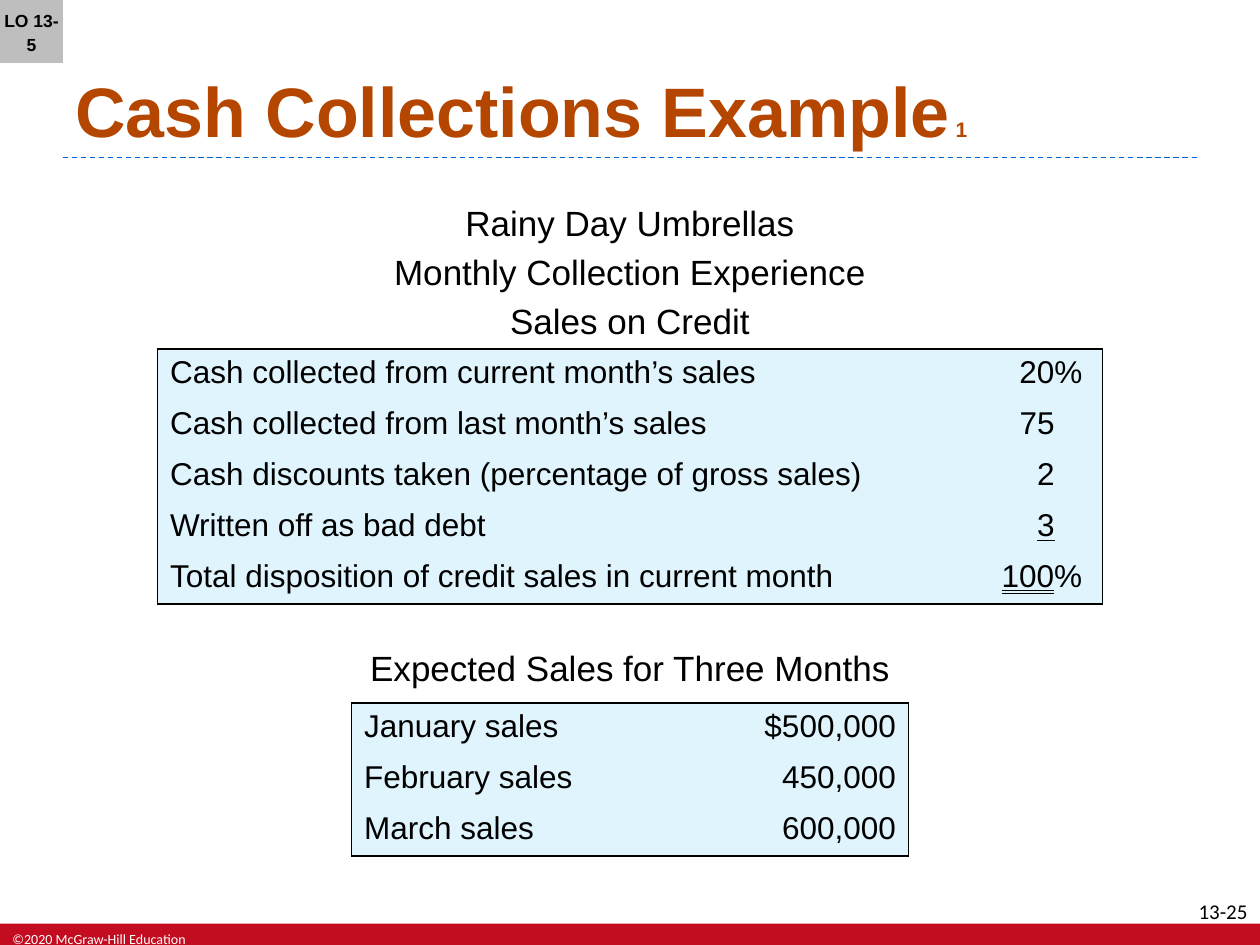
from dataclasses import dataclass

from lxml import etree
from pptx import Presentation
from pptx.dml.color import RGBColor
from pptx.enum.dml import MSO_LINE
from pptx.enum.shapes import MSO_CONNECTOR, MSO_SHAPE
from pptx.enum.text import MSO_ANCHOR, MSO_TEXT_UNDERLINE_TYPE, PP_ALIGN
from pptx.oxml.ns import qn
from pptx.util import Inches, Pt

RECT = MSO_SHAPE.RECTANGLE
STRAIGHT = MSO_CONNECTOR.STRAIGHT
DASH = MSO_LINE.DASH
TOP, MIDDLE, BOTTOM = MSO_ANCHOR.TOP, MSO_ANCHOR.MIDDLE, MSO_ANCHOR.BOTTOM
LEFT, CENTER, RIGHT = PP_ALIGN.LEFT, PP_ALIGN.CENTER, PP_ALIGN.RIGHT
SINGLE = MSO_TEXT_UNDERLINE_TYPE.SINGLE_LINE
DOUBLE = MSO_TEXT_UNDERLINE_TYPE.DOUBLE_LINE

COLS, ROWS = 40, 30
UNIT = 0.25
BLACK, WHITE, RUST, RED = "000000", "FFFFFF", "B44600", "C30C20"
GREY, BLUE, PALE = "BEBEBE", "0064C8", "DFF4FC"
ROW = 1.62  # table row height in grid rows
DIGITS, PERCENT = 0.42, 0.64  # right tab stops in inches
PLAIN = "{2D5ABB26-0587-4C30-8999-92F81FD0307C}"


@dataclass
class Box:
    """Place in grid columns and rows."""
    x: float
    y: float
    w: float
    h: float

    def emu(self) -> list:
        return [grid(n) for n in (self.x, self.y, self.w, self.h)]


@dataclass
class Value:
    """Table entry; a tab stop in inches puts its right end there."""
    text: str
    tab: float = 0
    align: PP_ALIGN = LEFT
    line: MSO_TEXT_UNDERLINE_TYPE = None
    tail: str = ""


def grid(n: float):
    return Inches(n * UNIT)


def rgb(code: str) -> RGBColor:
    return RGBColor.from_string(code)


def write(par, text: str, size=18, color=BLACK, font="Arial", bold=False,
          line=None, align=None):
    run = par.add_run()
    run.text = text
    face = run.font
    face.name, face.size, face.bold = font, Pt(size), bold
    face.underline = line
    face.color.rgb = rgb(color)
    if align is not None:
        par.alignment = align


def label(slide, box: Box, lines: list, anchor=TOP, gap=0, **style):
    """Add a text box with one paragraph a line and return its last paragraph."""
    frame = slide.shapes.add_textbox(*box.emu()).text_frame
    frame.word_wrap, frame.vertical_anchor = True, anchor
    for i, text in enumerate(lines):
        par = frame.add_paragraph() if i else frame.paragraphs[0]
        par.space_after = Pt(gap)
        write(par, text, **style)
    return par


def block(slide, box: Box, color: str):
    shape = slide.shapes.add_shape(RECT, *box.emu())
    shape.shadow.inherit = False
    shape.fill.solid()
    shape.fill.fore_color.rgb = rgb(color)
    shape.line.fill.background()
    return shape


def rule(slide, x: float, y: float, w: float):
    line = slide.shapes.add_connector(
        STRAIGHT, grid(x), grid(y), grid(x + w), grid(y))
    line.line.color.rgb = rgb(BLUE)
    line.line.width = Pt(0.75)
    line.line.dash_style = DASH
    etree.SubElement(line._element.spPr, qn("a:effectLst"))


def edge(cell, side: str):
    line = etree.SubElement(
        cell._tc.get_or_add_tcPr(), qn("a:ln" + side), w=str(Pt(1)))
    fill = etree.SubElement(line, qn("a:solidFill"))
    etree.SubElement(fill, qn("a:srgbClr"), val=BLACK)


def stop(par, at: float):
    tabs = etree.SubElement(par._p.get_or_add_pPr(), qn("a:tabLst"))
    etree.SubElement(tabs, qn("a:tab"), pos=str(Inches(at)), algn="r")


def ledger(slide, x: float, y: float, widths: list, data: list):
    """Draw names and values in a table framed on its outer sides."""
    last = len(data) - 1
    box = Box(x, y, sum(widths), ROW * len(data))
    table = slide.shapes.add_table(len(data), 2, *box.emu()).table
    table.first_row = table.horz_banding = False
    table._tbl.tblPr.find(qn("a:tableStyleId")).text = PLAIN
    for col, width in zip(table.columns, widths):
        col.width = grid(width)
    for i, (name, value) in enumerate(data):
        for j, item in enumerate((Value(name), value)):
            cell = table.cell(i, j)
            sides = {"L": j == 0, "R": j == 1, "T": i == 0, "B": i == last}
            for side, outer in sides.items():
                if outer:
                    edge(cell, side)
            cell.fill.solid()
            cell.fill.fore_color.rgb = rgb(PALE)
            par = cell.text_frame.paragraphs[0]
            if item.tab:
                stop(par, item.tab)
            text = "\t" + item.text if item.tab else item.text
            write(par, text, line=item.line, align=item.align)
            if item.tail:
                write(par, item.tail)


def main():
    deck = Presentation()
    deck.slide_width, deck.slide_height = grid(COLS), grid(ROWS)
    slide = deck.slides.add_slide(deck.slide_layouts[6])

    block(slide, Box(0, 29.32, COLS, 0.68), RED)
    label(slide, Box(0, 29.35, 8, 0.65), ["©2020 McGraw-Hill Education"],
          size=8, font="Calibri", color=WHITE)
    label(slide, Box(37.2, 28.32, 2.8, 0.8), ["13-25"],
          size=12, font="Calibri", align=RIGHT)

    rule(slide, 2, 5, 36)
    title = label(slide, Box(2, 0.2, 36, 4.8), ["Cash Collections Example"],
                  anchor=BOTTOM, size=40, color=RUST, bold=True)
    write(title, " 1", size=12, color=RUST, bold=True)

    label(slide, Box(5, 6.2, 30, 4.8),
          ["Rainy Day Umbrellas", "Monthly Collection Experience",
           "Sales on Credit"], gap=4, size=20, align=CENTER)
    ledger(slide, 5, 11.08, [26.4, 3.6], [
        ("Cash collected from current month’s sales", Value("20%", PERCENT)),
        ("Cash collected from last month’s sales", Value("75", DIGITS)),
        ("Cash discounts taken (percentage of gross sales)",
         Value("2", DIGITS)),
        ("Written off as bad debt", Value("3", DIGITS, line=SINGLE)),
        ("Total disposition of credit sales in current month",
         Value("100", line=DOUBLE, tail="%")),
    ])

    label(slide, Box(11.16, 20.32, 17.68, 2),
          ["Expected Sales for Three Months"], size=20, align=CENTER)
    ledger(slide, 11.16, 22.32, [9.32, 8.36], [
        ("January sales", Value("$500,000", align=RIGHT)),
        ("February sales", Value("450,000", align=RIGHT)),
        ("March sales", Value("600,000", align=RIGHT)),
    ])

    goal = block(slide, Box(0, 0, 2, 2), GREY).text_frame
    goal.word_wrap, goal.vertical_anchor = True, MIDDLE
    goal.margin_left = goal.margin_right = 0
    goal.paragraphs[0].line_spacing = 1.1
    write(goal.paragraphs[0], "LO 13-5", size=10, bold=True, align=CENTER)

    deck.save("out.pptx")


if __name__ == "__main__":
    main()
